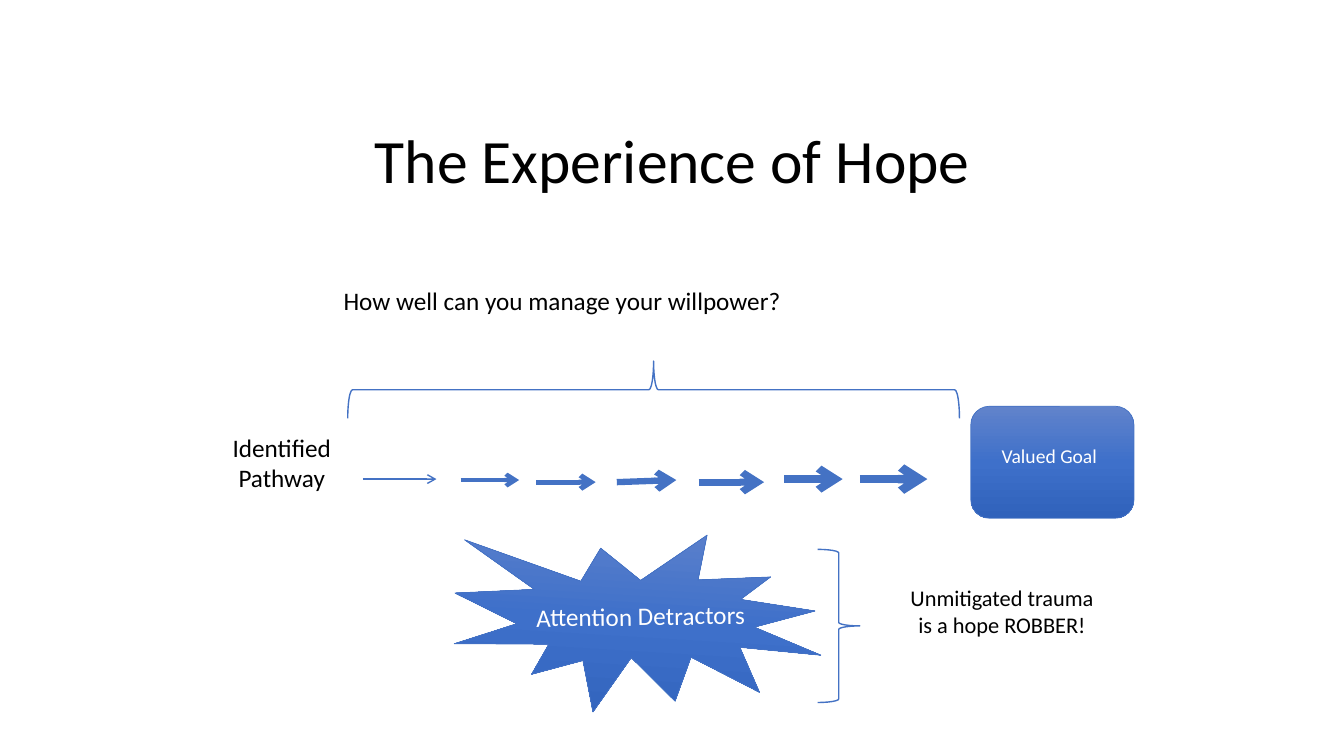
from copy import deepcopy
from dataclasses import dataclass

from lxml.etree import SubElement
from pptx import Presentation
from pptx.dml.color import RGBColor
from pptx.enum.shapes import MSO_CONNECTOR, MSO_SHAPE
from pptx.enum.text import MSO_ANCHOR, PP_ALIGN
from pptx.oxml.ns import qn
from pptx.util import Pt


@dataclass(frozen=True)
class Theme:
    font: str = "Calibri"
    ink: str = "000000"
    light: str = "FFFFFF"
    accent: str = "4472C4"
    gradient: tuple = ((0, "6183CB"), (0.5, "3E70CA"), (1, "3062BB"))
    title: float = 44
    body: float = 18
    note: float = 16
    goal: float = 14


THEME = Theme()


def add_text(slide, left, top, width, height, wording, size, color=THEME.ink,
             align=PP_ALIGN.CENTER, wrap=True):
    label = slide.shapes.add_textbox(Pt(left), Pt(top), Pt(width), Pt(height))
    frame = label.text_frame
    frame.text = wording
    frame.word_wrap = wrap
    for paragraph in frame.paragraphs:
        paragraph.alignment = align
        for run in paragraph.runs:
            run.font.name = THEME.font
            run.font.size = Pt(size)
            run.font.color.rgb = RGBColor.from_string(color)
    return label


def add_outline(slide, preset, left, top, width, height, weight):
    shape = slide.shapes.add_shape(preset, Pt(left), Pt(top), Pt(width), Pt(height))
    shape.shadow.inherit = False
    shape.fill.background()
    shape.line.color.rgb = RGBColor.from_string(THEME.accent)
    shape.line.width = Pt(weight)
    return shape


def add_gradient_shape(slide, preset, left, top, width, height):
    shape = add_outline(slide, preset, left, top, width, height, 0.5)
    shape.fill.gradient()
    shape.fill.gradient_angle = 270
    stop_list = shape._element.spPr.find(qn("a:gradFill")).find(qn("a:gsLst"))
    stop_list.append(deepcopy(stop_list[-1]))
    for stop, (position, color) in zip(shape.fill.gradient_stops, THEME.gradient):
        stop.position = position
        stop.color.rgb = RGBColor.from_string(color)
    return shape


def add_arrow(slide, start, end, weight):
    arrow = slide.shapes.add_connector(
        MSO_CONNECTOR.STRAIGHT, *(Pt(value) for value in (*start, *end)))
    arrow.line.color.rgb = RGBColor.from_string(THEME.accent)
    arrow.line.width = Pt(weight)
    SubElement(arrow.line._get_or_add_ln(), qn("a:tailEnd"), type="arrow")
    SubElement(arrow._element.spPr, qn("a:effectLst"))


def add_title(slide, left, top, width, height):
    title = add_text(slide, left, top, width, height, "The Experience of Hope", THEME.title)
    title.text_frame.vertical_anchor = MSO_ANCHOR.MIDDLE
    title.text_frame.paragraphs[0].line_spacing = 0.9


def add_pathway(slide, left, top, width, height):
    add_text(slide, left + 80, top, 479, 29, "How well can you manage your willpower?",
             THEME.body, align=PP_ALIGN.LEFT)

    span, depth = 437, 41
    middle_x, middle_y = left + 308.6, top + 78.2
    willpower_brace = add_outline(slide, MSO_SHAPE.RIGHT_BRACE, middle_x - depth / 2,
                                  middle_y - span / 2, depth, span, 1)
    willpower_brace.rotation = 270

    add_text(slide, left, top + 105, 86, 51, "Identified\nPathway", THEME.body, wrap=False)

    goal_width, goal_height = 116.6, 80
    goal_left, goal_top = left + width - goal_width, top + height - goal_height
    add_gradient_shape(slide, MSO_SHAPE.ROUNDED_RECTANGLE, goal_left, goal_top,
                       goal_width, goal_height)
    add_text(slide, goal_left + 11.5, goal_top + 23, 89.3, 24.5, "Valued Goal",
             THEME.goal, THEME.light)

    axis = top + 142
    growing_steps = (
        (101, 153.5, 0, 0, 1),
        (170.7, 212.5, 0.7, 0.7, 3),
        (224.7, 267.2, 2.2, 2.2, 3.5),
        (282.3, 324.8, 2.2, 0.7, 4.5),
        (340.7, 387.5, 2.2, 2.2, 5),
        (401.9, 443.6, 0, 0, 5.5),
        (455.9, 504.1, 0, 0, 6),
    )
    for begin, finish, begin_drop, finish_drop, weight in growing_steps:
        add_arrow(slide, (left + begin, axis + begin_drop),
                  (left + finish, axis + finish_drop), weight)


def add_detractors(slide, left, top, width, height):
    burst = add_gradient_shape(slide, MSO_SHAPE.EXPLOSION1, left, top, 263.5, height)
    burst.rotation = 3.5
    caption = add_text(slide, left + 50.4, top + 46, 166.3, 29, "Attention Detractors",
                       THEME.body, THEME.light)
    caption.rotation = 359.2
    add_outline(slide, MSO_SHAPE.RIGHT_BRACE, left + 260, top + 13, 30.2, 109.4, 1)
    note_width = 157
    add_text(slide, left + width - note_width, top + 34.6, note_width, 46,
             "Unmitigated trauma is a hope ROBBER!", THEME.note)


def main():
    deck = Presentation()
    deck.slide_width, deck.slide_height = Pt(960), Pt(540)
    slide = deck.slides.add_slide(deck.slide_layouts[6])
    add_title(slide, 156.2, 72, 648.7, 90)
    add_pathway(slide, 158.3, 200.2, 651.7, 170)
    add_detractors(slide, 324, 379.4, 470.2, 131)
    deck.save("out.pptx")


if __name__ == "__main__":
    main()
